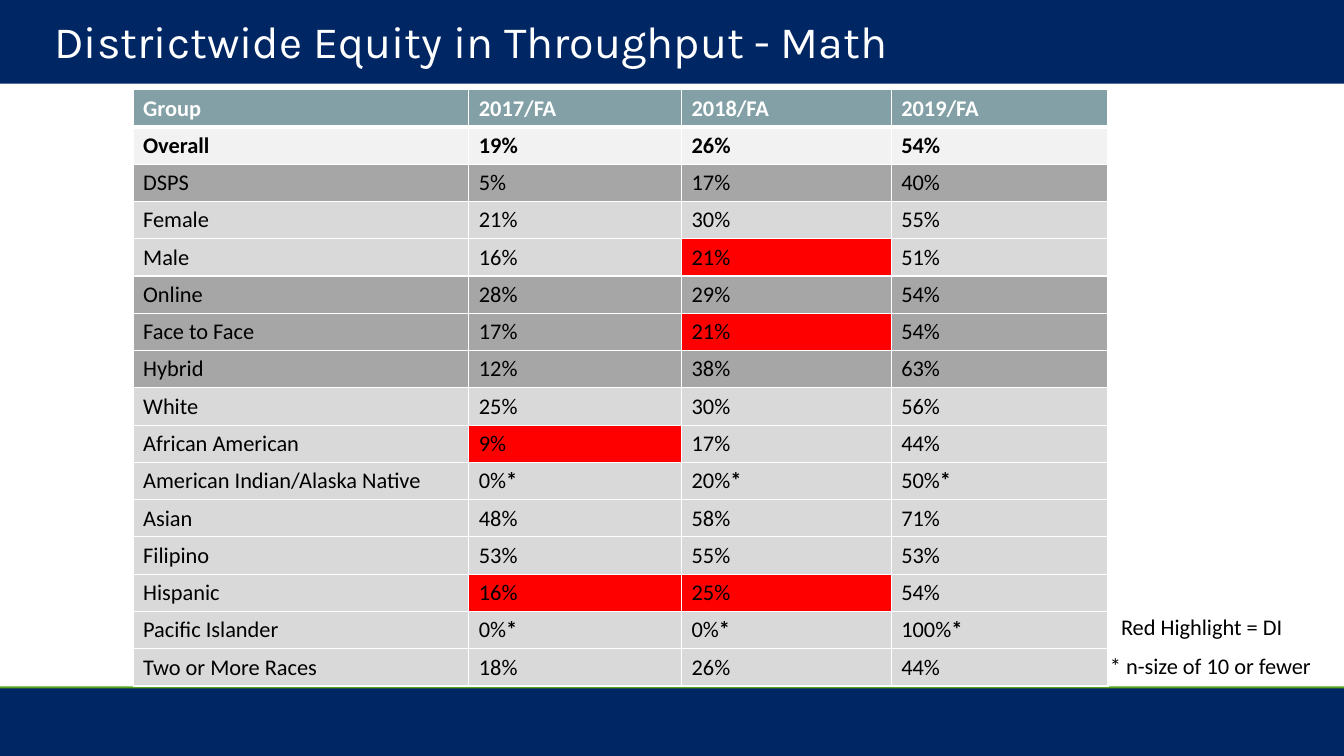
from lxml.etree import SubElement
from pptx import Presentation
from pptx.dml.color import RGBColor
from pptx.enum.shapes import MSO_SHAPE as Shape
from pptx.enum.text import MSO_ANCHOR as Anchor
from pptx.oxml.ns import qn
from pptx.util import Inches, Pt

NAVY = RGBColor(0x00, 0x26, 0x64)
GREEN = RGBColor(0x55, 0xA5, 0x1C)
TEAL = RGBColor(0x82, 0xA0, 0xA5)
WHITE = RGBColor(0xFF, 0xFF, 0xFF)
BLACK = RGBColor(0x00, 0x00, 0x00)
PALE = RGBColor(0xF2, 0xF2, 0xF2)
LIGHT = RGBColor(0xD9, 0xD9, 0xD9)
DARK = RGBColor(0xA6, 0xA6, 0xA6)
RED = RGBColor(0xFF, 0x00, 0x00)

SLIDE_W, SLIDE_H = 13.33, 7.5
COLUMN_WIDTHS = [3.33, 2.11, 2.08, 2.15]
ROW_HEIGHT = 0.37
HEADER = ("Group", "2017/FA", "2018/FA", "2019/FA")
THROUGHPUT = [
    ("Overall", "19%", "26%", "54%"),
    ("DSPS", "5%", "17%", "40%"),
    ("Female", "21%", "30%", "55%"),
    ("Male", "16%", "21%", "51%"),
    ("Online", "28%", "29%", "54%"),
    ("Face to Face", "17%", "21%", "54%"),
    ("Hybrid", "12%", "38%", "63%"),
    ("White", "25%", "30%", "56%"),
    ("African American", "9%", "17%", "44%"),
    ("American Indian/Alaska Native", "0%*", "20%*", "50%*"),
    ("Asian", "48%", "58%", "71%"),
    ("Filipino", "53%", "55%", "53%"),
    ("Hispanic", "16%", "25%", "54%"),
    ("Pacific Islander", "0%*", "0%*", "100%*"),
    ("Two or More Races", "18%", "26%", "44%"),
]
ROW_FILLS = {"Group": TEAL, "Overall": PALE, "DSPS": DARK, "Online": DARK,
             "Face to Face": DARK, "Hybrid": DARK}
IMPACTED = {("Male", "2018/FA"), ("Face to Face", "2018/FA"),
            ("African American", "2017/FA"),
            ("Hispanic", "2017/FA"), ("Hispanic", "2018/FA")}


def style_run(run, size, face, color, bold=False):
    run.font.size = Pt(size)
    run.font.name = face
    run.font.color.rgb = color
    run.font.bold = bold


def add_band(slide, top, height, color):
    band = slide.shapes.add_shape(Shape.RECTANGLE, 0, Inches(top),
                                  Inches(SLIDE_W), Inches(height))
    band.shadow.inherit = False
    band.fill.solid()
    band.fill.fore_color.rgb = color
    band.line.fill.background()


def add_label(slide, wording, left, top, width, height, size, face, color):
    label = slide.shapes.add_textbox(Inches(left), Inches(top),
                                     Inches(width), Inches(height))
    frame = label.text_frame
    frame.word_wrap = True
    frame.vertical_anchor = Anchor.MIDDLE
    frame.text = wording
    style_run(frame.paragraphs[0].runs[0], size, face, color)


def add_title_bar(slide, top, height):
    add_band(slide, top, height, NAVY)
    add_label(slide, "Districtwide Equity in Throughput - Math",
              0.44, top + 0.06, 12.56, 0.69, 32, "Karla", WHITE)


def add_footer(slide, top):
    for edge, color in ((top, GREEN), (top + 0.02, NAVY)):
        add_band(slide, edge, SLIDE_H - edge, color)


def set_borders(cell, top_width, bottom_width):
    properties = cell._tc.get_or_add_tcPr()
    for side, width in (("L", 1), ("R", 1), ("T", top_width), ("B", bottom_width)):
        border = SubElement(properties, qn(f"a:ln{side}"), w=str(Pt(width)))
        fill = SubElement(border, qn("a:solidFill"))
        SubElement(fill, qn("a:srgbClr"), val=str(WHITE))


def fill_cell(cell, wording, color, font_color, bold):
    cell.fill.solid()
    cell.fill.fore_color.rgb = color
    paragraph = cell.text_frame.paragraphs[0]
    value = wording.rstrip("*")
    paragraph.text = value
    style_run(paragraph.runs[0], 16, "Calibri", font_color, bold)
    if value != wording:
        star = paragraph.add_run()
        star.text = "*"
        style_run(star, 16, "Calibri", font_color, True)


def add_throughput_table(slide, left, top):
    rows = [HEADER] + THROUGHPUT
    table = slide.shapes.add_table(
        len(rows), len(HEADER), Inches(left), Inches(top),
        Inches(sum(COLUMN_WIDTHS)), Inches(ROW_HEIGHT * len(rows))).table
    for column, width in zip(table.columns, COLUMN_WIDTHS):
        column.width = Inches(width)
    for r, values in enumerate(rows):
        table.rows[r].height = Inches(ROW_HEIGHT)
        group = values[0]
        for c, wording in enumerate(values):
            cell = table.cell(r, c)
            impacted = (group, HEADER[c]) in IMPACTED
            color = RED if impacted else ROW_FILLS.get(group, LIGHT)
            set_borders(cell, 3 if r == 1 else 1, 3 if r == 0 else 1)
            fill_cell(cell, wording, color, WHITE if r == 0 else BLACK, r < 2)


def add_legend(slide, left, top):
    add_label(slide, "Red Highlight = DI", left + 0.11, top, 2.22, 0.37,
              16, "Calibri", BLACK)
    add_label(slide, "* n-size of 10 or fewer", left, top + 0.39, 2.42, 0.37,
              16, "Calibri", BLACK)


def main():
    deck = Presentation()
    deck.slide_width, deck.slide_height = Inches(SLIDE_W), Inches(SLIDE_H)
    slide = deck.slides.add_slide(deck.slide_layouts[6])
    add_footer(slide, 6.81)
    add_title_bar(slide, 0, 0.83)
    add_throughput_table(slide, 1.32, 0.89)
    add_legend(slide, 10.91, 6.03)
    deck.save("out.pptx")


if __name__ == "__main__":
    main()
